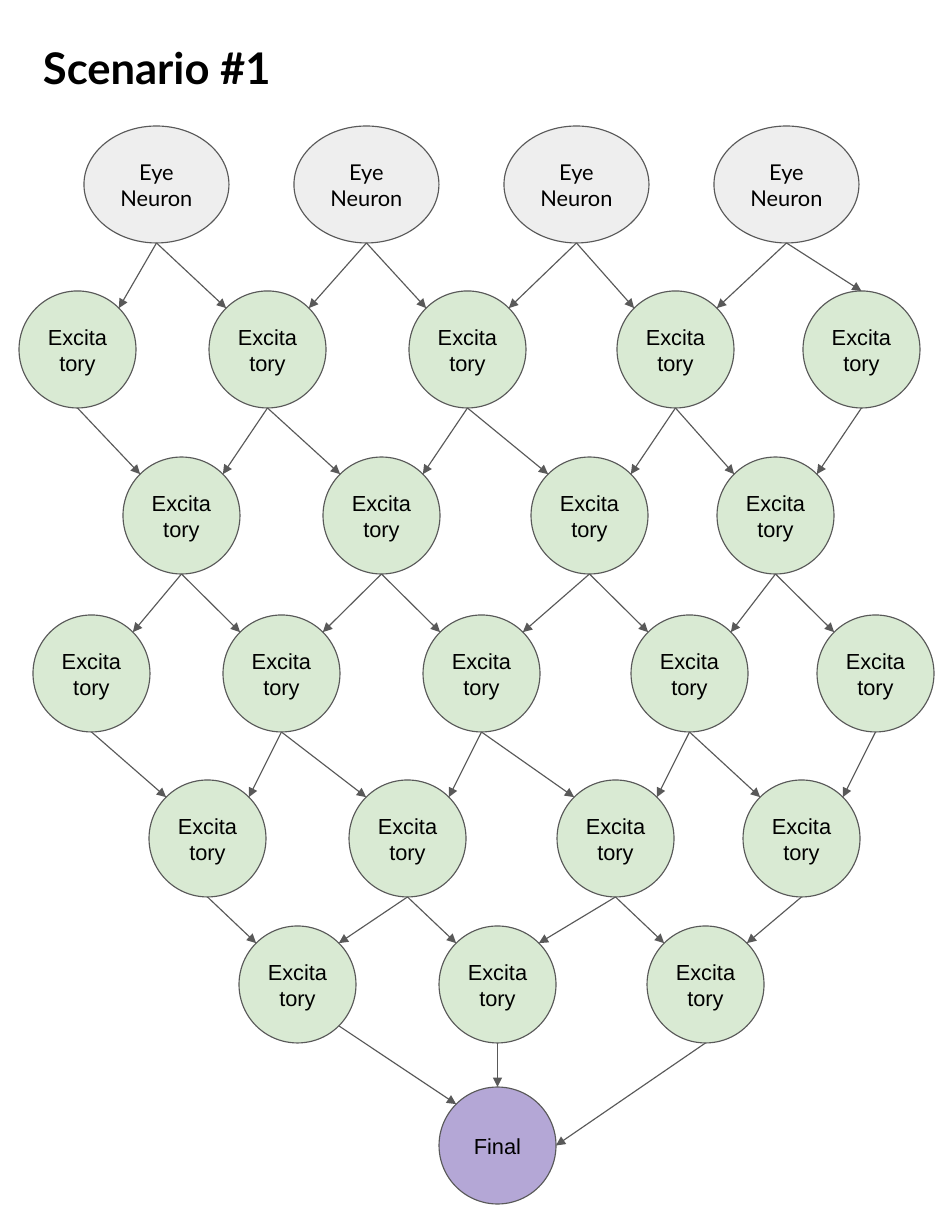
"""Build the Scenario #1 slide: a layered network of neurons joined by arrows."""
import math

import pptx
import pptx.dml.color
import pptx.enum.shapes
import pptx.enum.text
import pptx.oxml
import pptx.oxml.ns
import pptx.util

RGBColor = pptx.dml.color.RGBColor
BLACK = RGBColor(0x00, 0x00, 0x00)
GRAY = RGBColor(0xEE, 0xEE, 0xEE)
GREEN = RGBColor(0xD9, 0xEA, 0xD3)
PURPLE = RGBColor(0xB4, 0xA7, 0xD6)
OUTLINE = RGBColor(0x59, 0x59, 0x59)

SCALE = 914400 // 112
TITLE = ("Scenario #1", (32, 30, 887, 76))
DIAMETER = 117
EYE_WIDTH = 145
EYE_COLUMNS = {1: 84, 2: 294, 3: 504, 4: 714}
EXCITATORY_COLUMNS = {0: 0, 1: 190, 2: 390, 3: 598, 4: 784}

EYE = ("Eye Neuron", "Lato", GRAY, EYE_WIDTH, EYE_COLUMNS)
EXCITATORY = ("Excitatory", "Arial", GREEN, DIAMETER, EXCITATORY_COLUMNS)
FINAL = ("Final", "Arial", PURPLE, DIAMETER, EXCITATORY_COLUMNS)

LAYERS = [
    {"kind": EYE, "top": 126, "shift": 0, "columns": (1, 2, 3, 4), "steps": (-1, 0)},
    {"kind": EXCITATORY, "top": 291, "shift": 19, "columns": (0, 1, 2, 3, 4), "steps": (0, 1)},
    {"kind": EXCITATORY, "top": 457, "shift": -67, "columns": (1, 2, 3, 4), "steps": (-1, 0)},
    {"kind": EXCITATORY, "top": 615, "shift": 33, "columns": (0, 1, 2, 3, 4), "steps": (0, 1)},
    {"kind": EXCITATORY, "top": 780, "shift": -41, "columns": (1, 2, 3, 4), "steps": (-1, 0)},
    {"kind": EXCITATORY, "top": 926, "shift": 49, "columns": (1, 2, 3), "steps": ()},
    {"kind": FINAL, "top": 1087, "shift": 49, "columns": (2,), "steps": ()},
]

SITE_ANGLES = {"right": 0, "bottom right": 45, "bottom": 90,
               "top left": 225, "top": 270, "top right": 315}
SITE_EXCEPTIONS = {((0, 4), (1, 4)): "top"}
FINAL_ARROWS = [(1, "bottom right", "top left"), (2, "bottom", "top"), (3, "bottom", "right")]


def px(length):
    return pptx.util.Emu(round(length * SCALE))


def add_text(shape, text, font_name, size, bold=False):
    frame = shape.text_frame
    frame.word_wrap = True
    frame.margin_left = frame.margin_right = px(11)
    frame.margin_top = frame.margin_bottom = px(11)
    run = frame.paragraphs[0].add_run()
    run.text = text
    run.font.name = font_name
    run.font.size = pptx.util.Pt(size)
    run.font.bold = bold
    run.font.color.rgb = BLACK
    return frame


def add_neuron(slide, kind, box):
    text, font_name, color = kind[:3]
    shape = slide.shapes.add_shape(
        pptx.enum.shapes.MSO_SHAPE.OVAL, *(px(length) for length in box))
    shape.shadow.inherit = False
    shape.fill.solid()
    shape.fill.fore_color.rgb = color
    shape.line.color.rgb = OUTLINE
    shape.line.width = pptx.util.Pt(0.75)
    frame = add_text(shape, text, font_name, 14)
    frame.vertical_anchor = pptx.enum.text.MSO_ANCHOR.MIDDLE
    frame.paragraphs[0].alignment = pptx.enum.text.PP_ALIGN.CENTER


def site_point(box, site):
    left, top, width, height = box
    angle = math.radians(SITE_ANGLES[site])
    return (left + width / 2 * (1 + math.cos(angle)),
            top + height / 2 * (1 + math.sin(angle)))


def add_arrow(slide, source, source_site, target, target_site):
    points = site_point(source, source_site) + site_point(target, target_site)
    connector = slide.shapes.add_connector(
        pptx.enum.shapes.MSO_CONNECTOR.STRAIGHT, *(px(length) for length in points))
    connector.line.color.rgb = OUTLINE
    connector.line.width = pptx.util.Pt(0.75)
    line = connector.line._get_or_add_ln()
    tail = pptx.oxml.parse_xml(
        f'<a:tailEnd {pptx.oxml.ns.nsdecls("a")} type="triangle" w="med" len="med"/>')
    line.append(tail)
    effects = pptx.oxml.parse_xml(f'<a:effectLst {pptx.oxml.ns.nsdecls("a")}/>')
    line.addnext(effects)


def layout_neurons():
    boxes = {}
    for row, layer in enumerate(LAYERS):
        width, lefts = layer["kind"][3:]
        for column in layer["columns"]:
            left = lefts[column] + layer["shift"]
            boxes[row, column] = (left, layer["top"], width, DIAMETER)
    return boxes


def find_arrows(boxes):
    for (row, column), source in boxes.items():
        for step in LAYERS[row]["steps"]:
            target_key = (row + 1, column + step)
            if target_key in boxes:
                target = boxes[target_key]
                leftward = target[0] + target[2] / 2 < source[0] + source[2] / 2
                site = SITE_EXCEPTIONS.get(
                    ((row, column), target_key), "top right" if leftward else "top left")
                yield source, "bottom", target, site
    for column, source_site, target_site in FINAL_ARROWS:
        yield boxes[5, column], source_site, boxes[6, 2], target_site


def main():
    presentation = pptx.Presentation()
    presentation.slide_width = px(952)
    presentation.slide_height = px(1232)
    slide = presentation.slides.add_slide(presentation.slide_layouts[6])

    title, title_box = TITLE
    text_box = slide.shapes.add_textbox(*(px(length) for length in title_box))
    add_text(text_box, title, "Lato", 28, bold=True)

    boxes = layout_neurons()
    for (row, _), box in boxes.items():
        add_neuron(slide, LAYERS[row]["kind"], box)
    for arrow in find_arrows(boxes):
        add_arrow(slide, *arrow)

    presentation.save("out.pptx")


if __name__ == "__main__":
    main()
